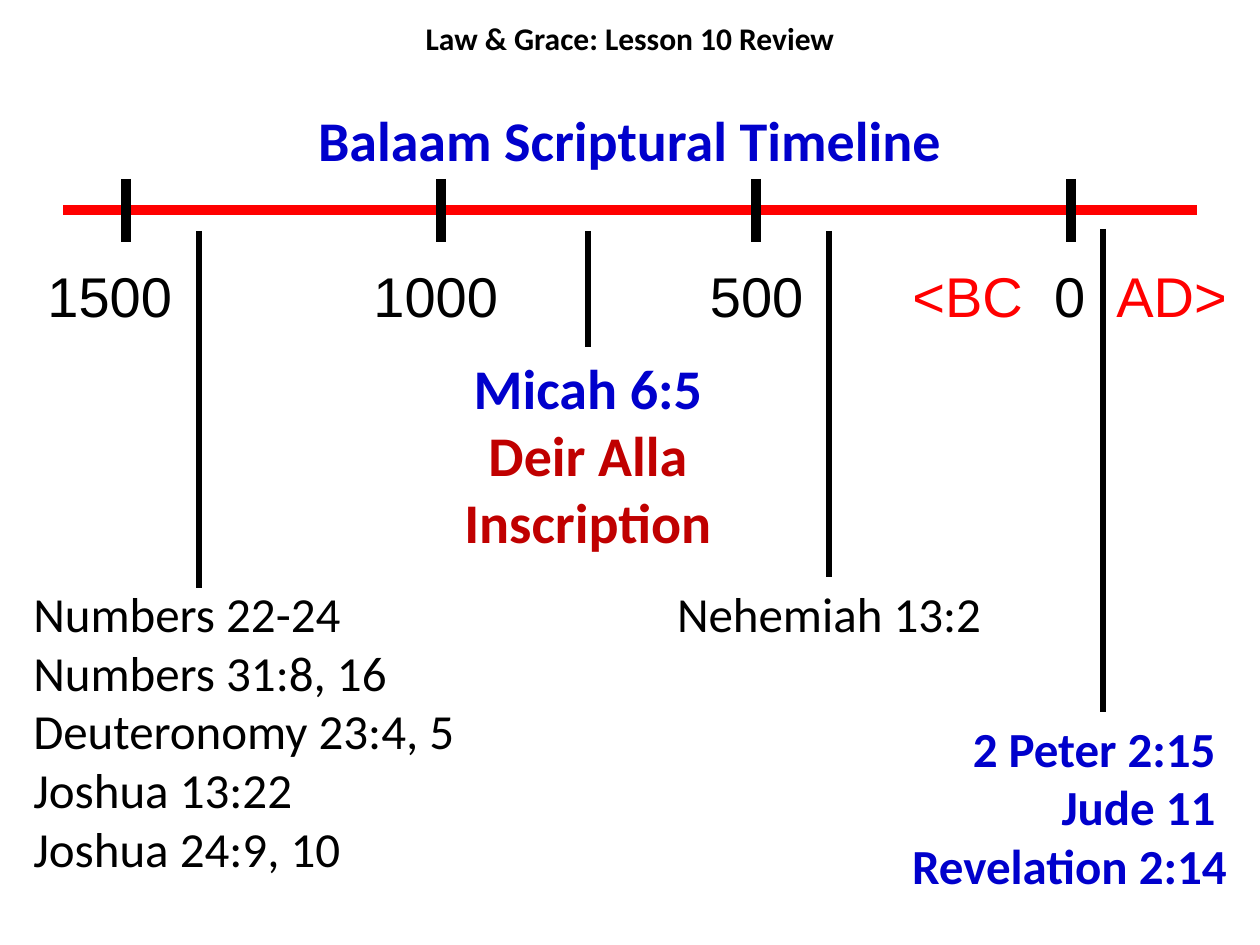
from lxml.etree import SubElement
from pptx import Presentation
from pptx.dml.color import RGBColor
from pptx.enum.shapes import MSO_CONNECTOR
from pptx.enum.text import MSO_ANCHOR, PP_ALIGN
from pptx.oxml.ns import qn
from pptx.util import Emu, Pt

COLORS = {"black": "000000", "red": "FF0000", "blue": "0000CC", "crimson": "C00000"}
FORMATS = {
    "header": {"name": "Calibri", "size": Pt(18), "bold": True},
    "title": {"name": "Calibri", "size": Pt(32), "bold": True},
    "axis": {"name": "Arial", "size": Pt(32), "bold": False},
    "verse": {"name": "Calibri", "size": Pt(28), "bold": False},
    "strong_verse": {"name": "Calibri", "size": Pt(28), "bold": True},
}
TOP = 0


def px(length):
    return Emu(round(length * 914400 / 126))


def add_line(slide, start, end, color="black", width=3):
    connector = slide.shapes.add_connector(
        MSO_CONNECTOR.STRAIGHT, *map(px, start), *map(px, end)
    )
    connector.line.color.rgb = RGBColor.from_string(COLORS[color])
    connector.line.width = Pt(width)
    SubElement(connector._element.spPr, qn("a:effectLst"))
    return connector


def add_run(paragraph, text, style, color):
    run = paragraph.add_run()
    run.text = text
    for attribute, value in FORMATS[style].items():
        setattr(run.font, attribute, value)
    run.font.color.rgb = RGBColor.from_string(COLORS[color])


def add_text(slide, box, lines, style, align=PP_ALIGN.LEFT, anchor=MSO_ANCHOR.TOP):
    shape = slide.shapes.add_textbox(*map(px, box))
    frame = shape.text_frame
    frame.word_wrap = True
    frame.vertical_anchor = anchor
    for index, (text, color) in enumerate(lines):
        paragraph = frame.add_paragraph() if index else frame.paragraphs[0]
        paragraph.alignment = align
        add_run(paragraph, text, style, color)
    return shape


def add_axis(slide, box):
    left, top, width, height = box
    middle = top + height // 2
    add_line(slide, (left, middle), (left + width, middle), "red", 6)
    for index in range(4):
        tick = left + 63 + 315 * index
        add_line(slide, (tick, top), (tick, top + height), width=6)


def add_axis_labels(slide, box, labels):
    shape = slide.shapes.add_textbox(*map(px, box))
    frame = shape.text_frame
    frame.word_wrap = True
    paragraph = frame.paragraphs[0]
    tabs = SubElement(paragraph._p.get_or_add_pPr(), qn("a:tabLst"))
    for text, color, center in labels:
        position = px(center - box[0]) - frame.margin_left
        SubElement(tabs, qn("a:tab"), pos=str(position), algn="ctr")
        add_run(paragraph, "\t" + text, "axis", color)


def add_event(slide, box, lines, style, align, start, end=None):
    shape = add_text(slide, box, lines, style, align)
    left, top, width, height = box
    connector = add_line(slide, start, end or (left + width / 2, top))
    if end is None:
        connector.end_connect(shape, TOP)


def main():
    presentation = Presentation()
    presentation.slide_width, presentation.slide_height = px(1260), px(945)
    slide = presentation.slides.add_slide(presentation.slide_layouts[6])

    add_axis(slide, (63, 179, 1134, 63))
    add_axis_labels(slide, (0, 255, 1260, 79), [
        ("1500", "black", 110), ("1000", "black", 436), ("500", "black", 757),
        ("<BC", "red", 968), ("0", "black", 1070), ("AD>", "red", 1172),
    ])
    add_text(slide, (0, 76, 1260, 126), [("Balaam Scriptural Timeline", "blue")],
             "title", PP_ALIGN.CENTER, MSO_ANCHOR.MIDDLE)
    add_text(slide, (402, 13, 456, 50), [("Law & Grace: Lesson 10 Review", "black")],
             "header", PP_ALIGN.CENTER)

    references = ["Numbers 22-24", "Numbers 31:8, 16", "Deuteronomy 23:4, 5",
                  "Joshua 13:22", "Joshua 24:9, 10"]
    add_event(slide, (21, 577, 557, 310), [(text, "black") for text in references],
              "verse", PP_ALIGN.LEFT, (199, 231), (199, 588))
    add_event(slide, (441, 347, 294, 217),
              [("Micah 6:5", "blue"), ("Deir Alla Inscription", "crimson")],
              "title", PP_ALIGN.CENTER, (588, 231))
    add_event(slide, (619, 577, 420, 72), [("Nehemiah 13:2", "black")],
              "verse", PP_ALIGN.CENTER, (829, 231))
    references = ["2 Peter 2:15 ", "Jude 11 ", "Revelation 2:14"]
    add_event(slide, (798, 712, 441, 190), [(text, "blue") for text in references],
              "strong_verse", PP_ALIGN.RIGHT, (1103, 229), (1103, 712))

    presentation.save("out.pptx")


if __name__ == "__main__":
    main()
